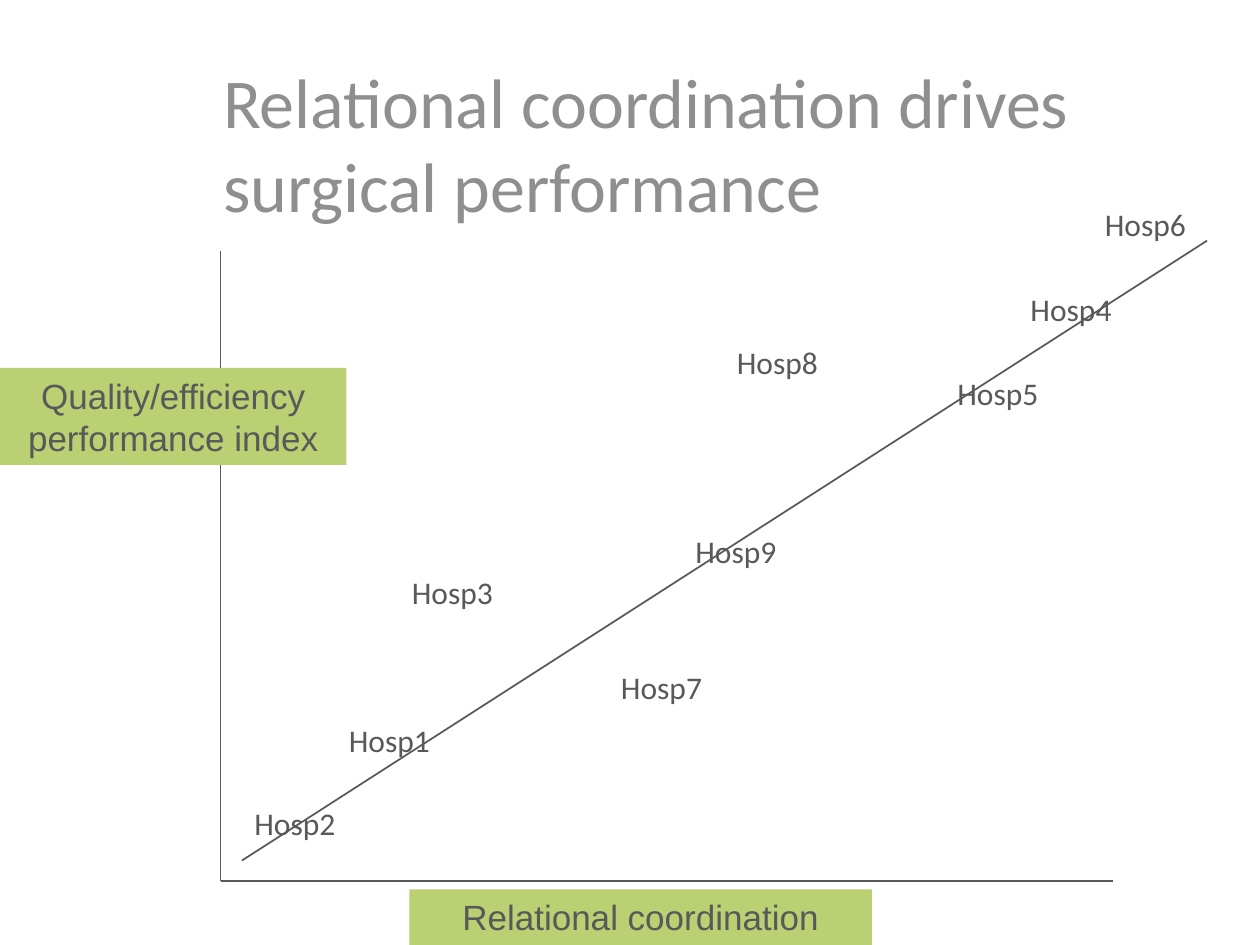
from lxml.etree import SubElement
from pptx import Presentation
from pptx.dml.color import RGBColor
from pptx.enum.shapes import MSO_CONNECTOR, MSO_SHAPE
from pptx.enum.text import MSO_ANCHOR, MSO_AUTO_SIZE, PP_ALIGN
from pptx.oxml.ns import qn
from pptx.util import Inches, Pt

TITLE = "Relational coordination drives surgical performance"
GREY, DARK, GREEN = "8F8F8F", "595959", "BBD073"

LINES = [
    (1.75, 1.99, 1.75, 6.99),
    (1.75, 6.99, 8.83, 6.99),
    (1.92, 6.83, 9.58, 1.91),
]
AXIS_LABELS = [
    ("Relational coordination", 3.25, 7.06, 3.67, 0.44),
    ("Quality/efficiency performance index", 0, 2.92, 2.75, 0.77),
]
HOSPITALS = [
    ("Hosp2", 1.92, 6.33),
    ("Hosp1", 2.67, 5.67),
    ("Hosp7", 4.83, 5.25),
    ("Hosp3", 3.17, 4.5),
    ("Hosp9", 5.42, 4.17),
    ("Hosp5", 7.5, 2.92),
    ("Hosp6", 8.67, 1.58),
    ("Hosp8", 5.75, 2.67),
    ("Hosp4", 8.08, 2.25),
]
HOSPITAL_SIZE = (1.25, 0.5)


def rgb(color):
    return RGBColor.from_string(color)


def inches(*values):
    return [Inches(v) for v in values]


def write(sp, text, size, font, color, align=PP_ALIGN.LEFT, anchor=MSO_ANCHOR.TOP):
    tf = sp.text_frame
    tf.text = text
    tf.word_wrap = True
    tf.auto_size = MSO_AUTO_SIZE.NONE
    tf.vertical_anchor = anchor
    p = tf.paragraphs[0]
    p.alignment = align
    r = p.runs[0]
    r.font.size = Pt(size)
    r.font.name = font
    r.font.color.rgb = rgb(color)


def add_line(s, *ends):
    line = s.shapes.add_connector(MSO_CONNECTOR.STRAIGHT, *inches(*ends))
    line.line.color.rgb = rgb(DARK)
    line.line.width = Pt(1)
    SubElement(line._element.spPr, qn("a:effectLst"))


def add_axis_label(s, text, *box):
    sp = s.shapes.add_shape(MSO_SHAPE.RECTANGLE, *inches(*box))
    sp.shadow.inherit = False
    sp.fill.solid()
    sp.fill.fore_color.rgb = rgb(GREEN)
    sp.line.fill.background()
    write(sp, text, 20, "Arial", DARK, PP_ALIGN.CENTER)


def main():
    prs = Presentation()
    prs.slide_width, prs.slide_height = inches(10, 7.5)
    s = prs.slides.add_slide(prs.slide_layouts[5])

    title = s.shapes.title
    title.left, title.top, title.width, title.height = inches(1.67, 0.67, 7.83, 0.92)
    write(title, TITLE, 40, "Calibri", GREY, anchor=MSO_ANCHOR.MIDDLE)

    axes, trend = LINES[:2], LINES[2]
    for ends in axes:
        add_line(s, *ends)
    for label in AXIS_LABELS:
        add_axis_label(s, *label)
    add_line(s, *trend)
    for name, left, top in HOSPITALS:
        sp = s.shapes.add_textbox(*inches(left, top, *HOSPITAL_SIZE))
        write(sp, name, 18, "Calibri", DARK)

    prs.save("out.pptx")


if __name__ == "__main__":
    main()
